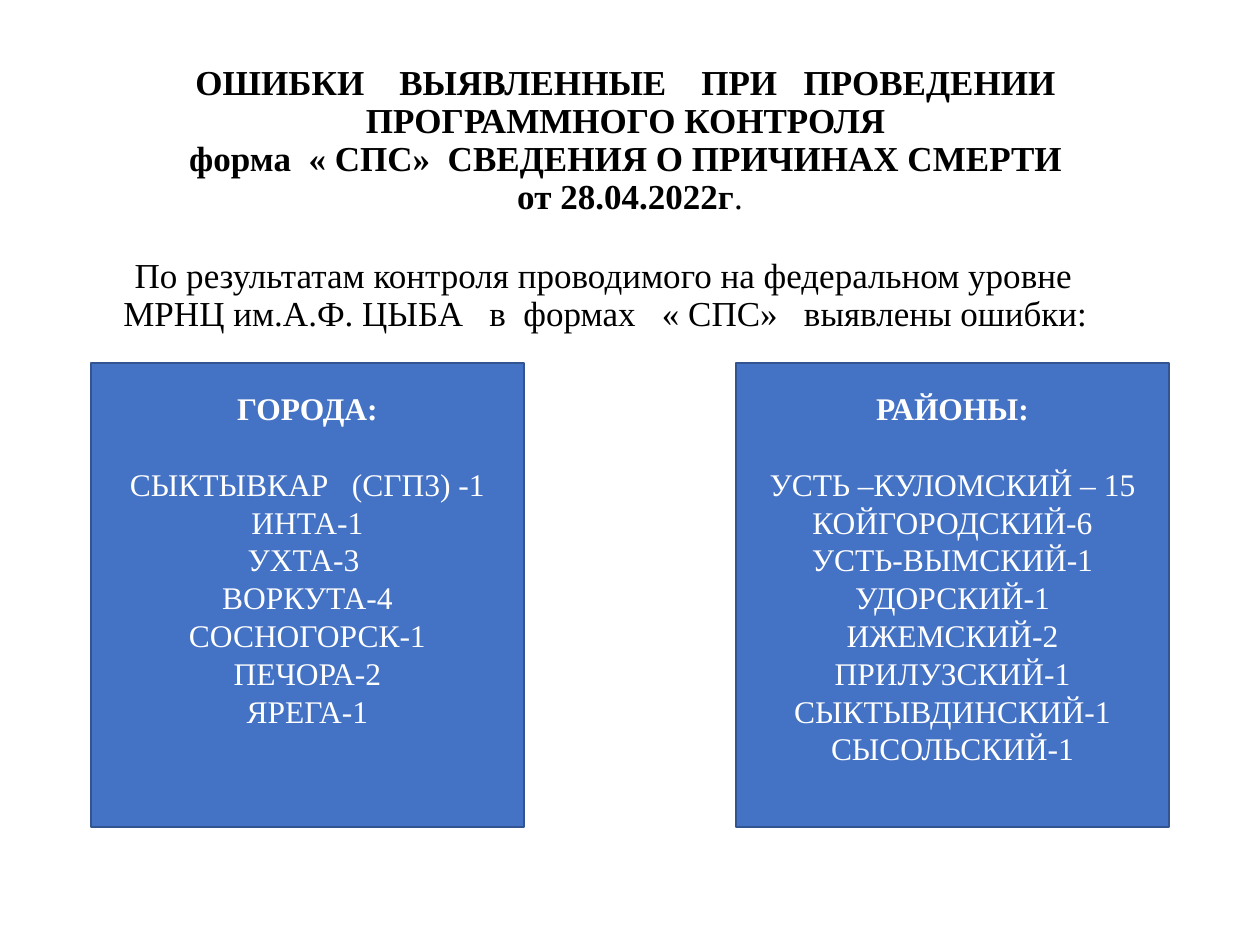
from dataclasses import dataclass

from pptx import Presentation
from pptx import util as u
from pptx.dml.color import RGBColor
from pptx.enum import shapes, text


@dataclass(frozen=True)
class Theme:
    font: str = "Times New Roman"
    ink: str = "000000"
    paper: str = "FFFFFF"
    panel: str = "4472C4"
    outline: str = "325491"
    heading_size: float = 20
    panel_size: float = 18
    line_spacing: float = 0.9


class SlideBuilder:
    """Places elements by shares of the slide's width and height."""

    def __init__(self, presentation, theme):
        self.theme = theme
        self.width = presentation.slide_width
        self.height = presentation.slide_height
        self.slide = presentation.slides.add_slide(presentation.slide_layouts[6])

    def area(self, left, top, width, height):
        return (int(left * self.width), int(top * self.height),
                int(width * self.width), int(height * self.height))

    def run(self, paragraph, words, size, color, bold=False):
        run = paragraph.add_run()
        run.text = words
        run.font.name = self.theme.font
        run.font.size = u.Pt(size)
        run.font.bold = bold
        run.font.color.rgb = RGBColor.from_string(color)

    def text_box(self, area, anchor):
        frame = self.slide.shapes.add_textbox(*self.area(*area)).text_frame
        frame.word_wrap = True
        frame.vertical_anchor = anchor
        paragraph = frame.paragraphs[0]
        paragraph.line_spacing = self.theme.line_spacing
        return paragraph

    def title(self, area, lines, ending):
        paragraph = self.text_box(area, text.MSO_ANCHOR.MIDDLE)
        paragraph.alignment = text.PP_ALIGN.CENTER
        for index, line in enumerate(lines):
            if index:
                paragraph.add_line_break()
            self.run(paragraph, line, self.theme.heading_size, self.theme.ink, True)
        self.run(paragraph, ending, self.theme.heading_size, self.theme.ink)

    def introduction(self, area, words):
        paragraph = self.text_box(area, text.MSO_ANCHOR.TOP)
        paragraph.space_before = u.Pt(7.5)
        properties = paragraph._p.get_or_add_pPr()
        properties.set("marL", str(u.Inches(0.19)))
        properties.set("indent", str(u.Inches(0.09)))
        self.run(paragraph, words, self.theme.heading_size, self.theme.ink)

    def panel(self, area, heading, entries):
        theme = self.theme
        shape = self.slide.shapes.add_shape(shapes.MSO_SHAPE.RECTANGLE, *self.area(*area))
        shape.shadow.inherit = False
        shape.fill.solid()
        shape.fill.fore_color.rgb = RGBColor.from_string(theme.panel)
        shape.line.color.rgb = RGBColor.from_string(theme.outline)
        shape.line.width = u.Pt(1)
        frame = shape.text_frame
        frame.word_wrap = True
        frame.vertical_anchor = text.MSO_ANCHOR.TOP
        frame.margin_top = u.Inches(0.21)
        for index, words in enumerate([heading, *entries]):
            paragraph = frame.add_paragraph() if index else frame.paragraphs[0]
            paragraph.alignment = text.PP_ALIGN.CENTER
            if index == 0:
                paragraph.space_after = u.Pt(21.6)
            self.run(paragraph, words, theme.panel_size, theme.paper, index == 0)


def main():
    presentation = Presentation()
    presentation.slide_width = u.Inches(10)
    presentation.slide_height = u.Inches(7.5)
    builder = SlideBuilder(presentation, Theme())

    # Title and introduction share the same column
    column_left, column_width = 0.069, 0.862
    builder.title(
        (column_left, 0.053, column_width, 0.193),
        ["ОШИБКИ    ВЫЯВЛЕННЫЕ    ПРИ   ПРОВЕДЕНИИ ",
         "ПРОГРАММНОГО КОНТРОЛЯ ",
         "форма  « СПС»  СВЕДЕНИЯ О ПРИЧИНАХ СМЕРТИ ",
         "от 28.04.2022г"],
        ".")
    builder.introduction(
        (column_left, 0.267, column_width, 0.1),
        "По результатам контроля проводимого на федеральном уровне "
        "МРНЦ им.А.Ф. ЦЫБА   в  формах   « СПС»   выявлены ошибки:")

    # Two panels, mirrored about the slide's centre
    margin, panel_width = 0.072, 0.344
    panels = {
        "ГОРОДА:": ["СЫКТЫВКАР   (СГП3) -1", "ИНТА-1", "УХТА-3 ", "ВОРКУТА-4",
                    "СОСНОГОРСК-1", "ПЕЧОРА-2", "ЯРЕГА-1"],
        "РАЙОНЫ:": ["УСТЬ –КУЛОМСКИЙ – 15", "КОЙГОРОДСКИЙ-6", "УСТЬ-ВЫМСКИЙ-1",
                    "УДОРСКИЙ-1", "ИЖЕМСКИЙ-2", "ПРИЛУЗСКИЙ-1",
                    "СЫКТЫВДИНСКИЙ-1", "СЫСОЛЬСКИЙ-1"],
    }
    for left, (heading, entries) in zip((margin, 1 - margin - panel_width), panels.items()):
        builder.panel((left, 0.384, panel_width, 0.491), heading, entries)

    presentation.save("out.pptx")


if __name__ == "__main__":
    main()
